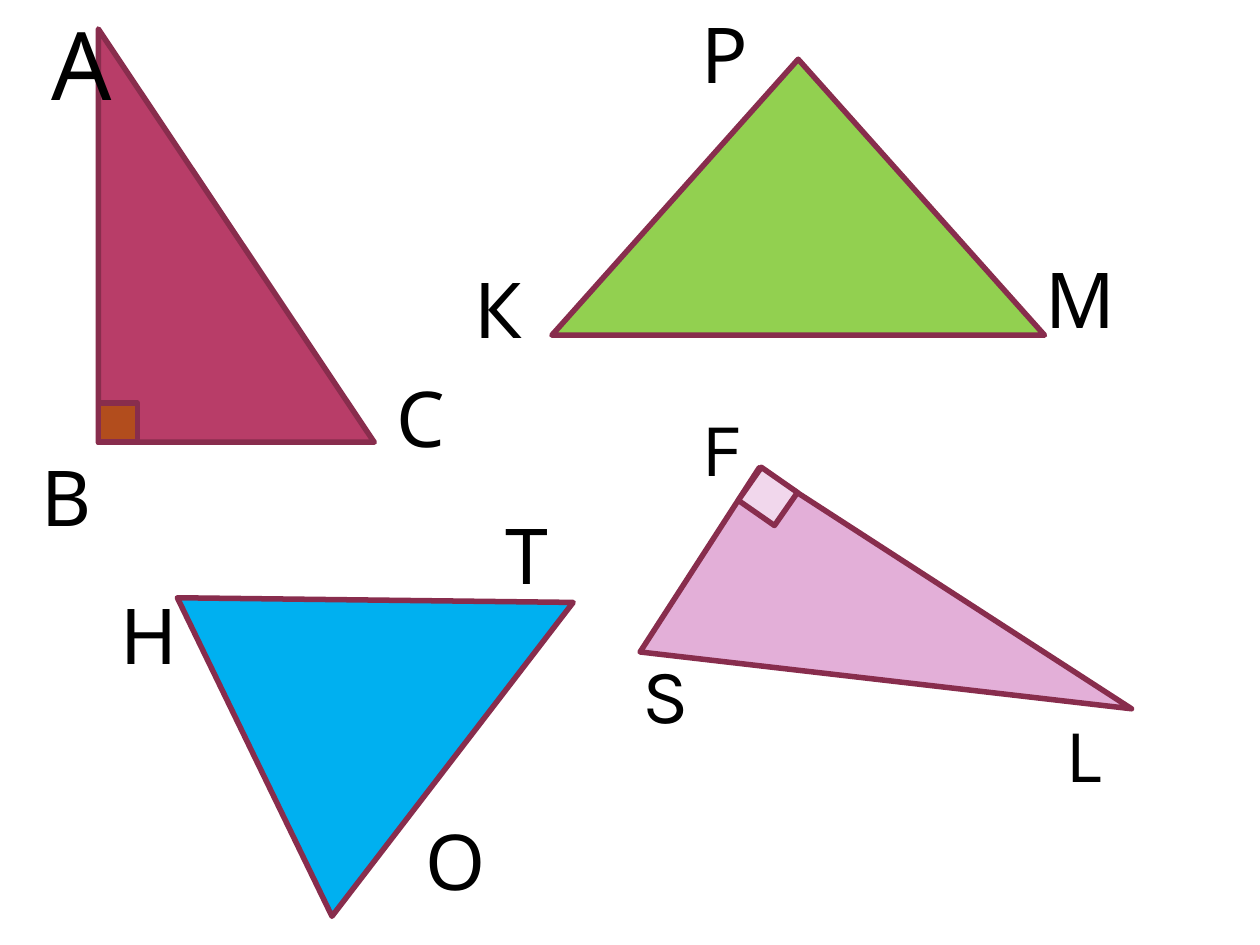
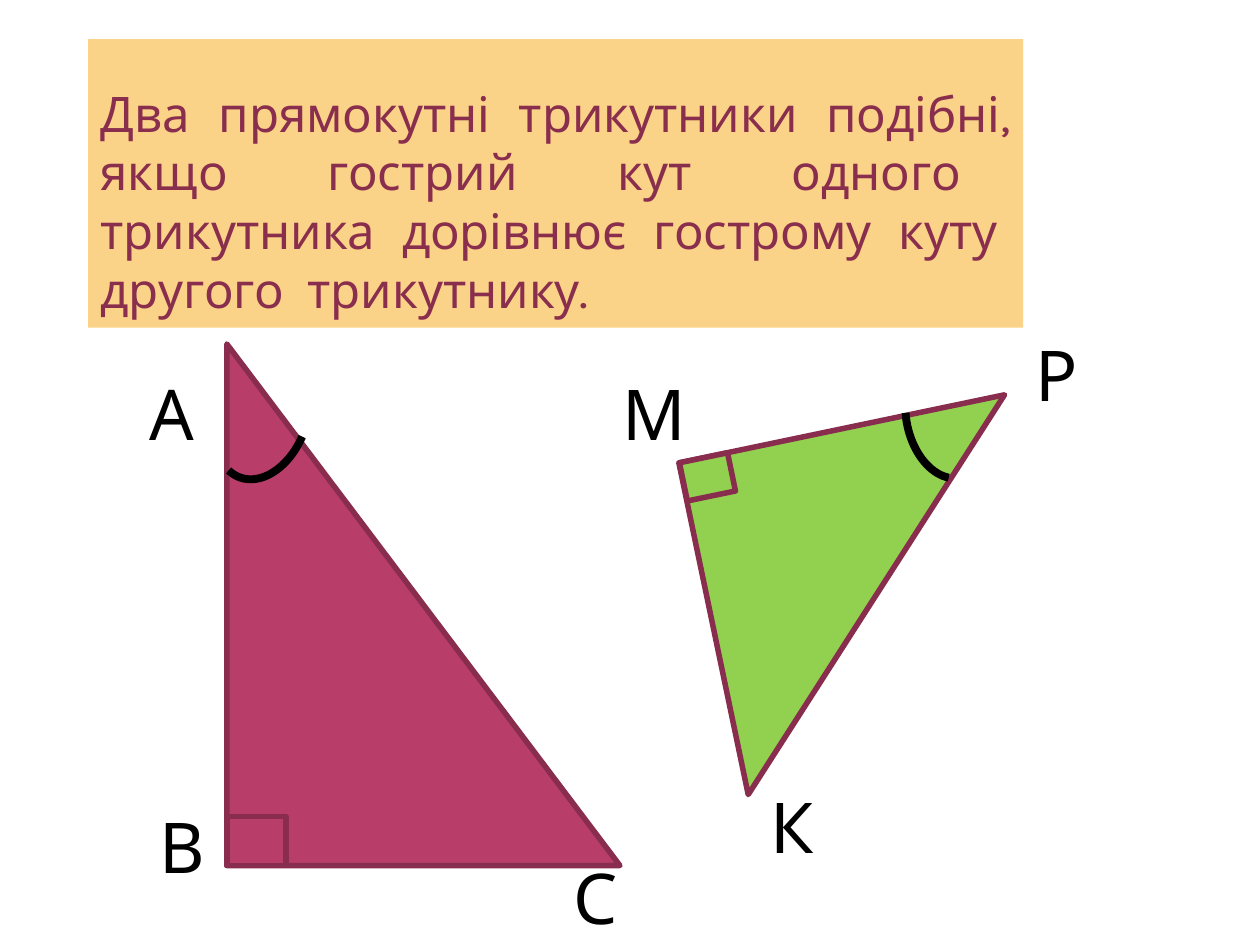
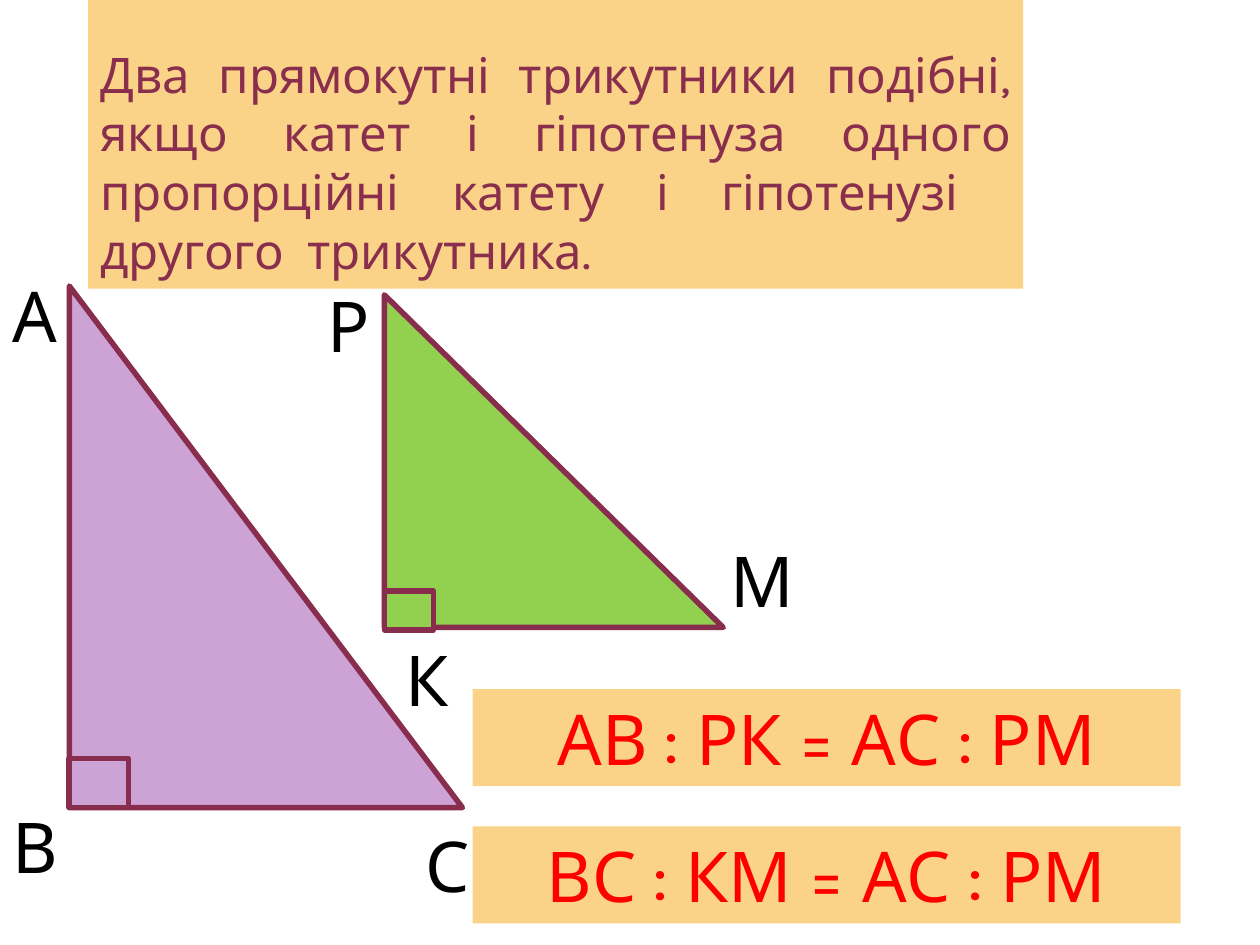
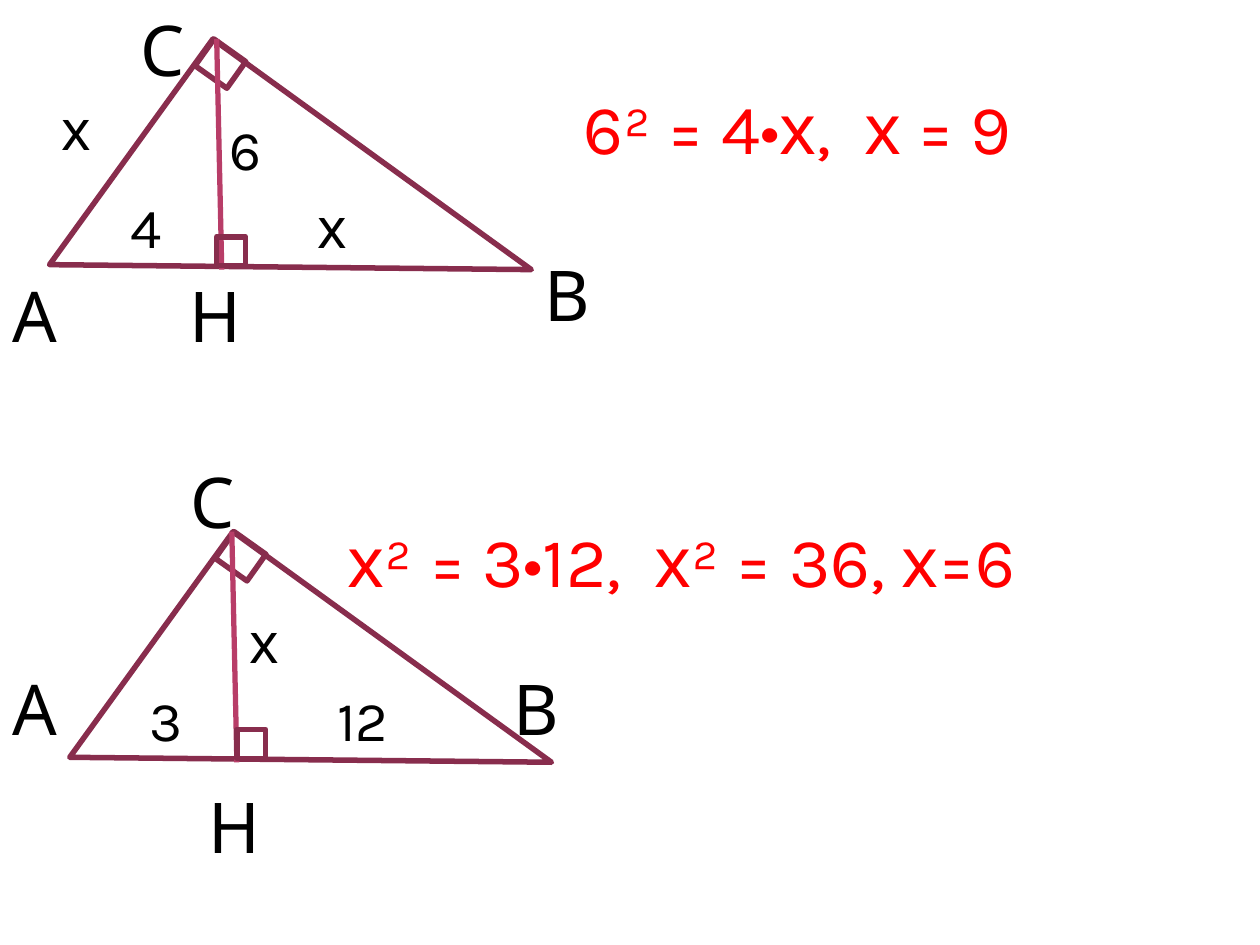
from dataclasses import dataclass

import pptx
import pptx.dml.color
import pptx.enum.shapes
import pptx.enum.text
import pptx.oxml
import pptx.oxml.ns
import pptx.util
from pptx.util import Inches

Kind = pptx.enum.shapes.MSO_SHAPE
Align = pptx.enum.text.PP_ALIGN
Anchor = pptx.enum.text.MSO_ANCHOR
Grow = pptx.enum.text.MSO_AUTO_SIZE


@dataclass(frozen=True)
class Theme:
    font: str = "Karla"
    black: str = "000000"
    red: str = "FF0000"
    wine: str = "8A2E4E"
    edge: str = "882D4D"
    rose: str = "B83D68"
    green: str = "92D050"
    blue: str = "00B0F0"
    pink: str = "E3AFD8"
    pale: str = "F1D7EC"
    lilac: str = "CDA3D6"
    rust: str = "B24D1D"
    sand: str = "FBD388"
    small: int = 28
    side: int = 32
    point: int = 40
    large: int = 44
    huge: int = 54
    outline: float = 3.15
    height: float = 3
    angle: float = 4.5


THEME = Theme()


@dataclass(frozen=True)
class Figure:
    kind: Kind
    left: float
    top: float
    width: float
    height: float
    fill: str = ""
    turn: float = 0


@dataclass(frozen=True)
class Label:
    text: str
    left: float
    top: float
    width: float = 0.7
    size: int = THEME.point
    color: str = THEME.black
    wrap: bool = True


def tint(code: str) -> pptx.dml.color.RGBColor:
    return pptx.dml.color.RGBColor.from_string(code)


def place(slide, item: Figure):
    """Add the bare shape, filled if it has a colour and without a line."""
    shape = slide.shapes.add_shape(
        item.kind, Inches(item.left), Inches(item.top), Inches(item.width), Inches(item.height))
    shape.shadow.inherit = False
    shape.rotation = item.turn
    if item.fill:
        shape.fill.solid()
        shape.fill.fore_color.rgb = tint(item.fill)
    else:
        shape.fill.background()
    shape.line.fill.background()
    return shape


def stroke(line, color: str, width: float) -> None:
    line.color.rgb = tint(color)
    line.width = pptx.util.Pt(width)


def draw(slide, *items: Figure) -> None:
    for item in items:
        stroke(place(slide, item).line, THEME.edge, THEME.outline)


def arc(slide, left: float, top: float, width: float, height: float, turn: float) -> None:
    shape = place(slide, Figure(Kind.ARC, left, top, width, height, turn=turn))
    shape.adjustments[0], shape.adjustments[1] = 167.86, 7.11
    stroke(shape.line, THEME.black, THEME.angle)


def write(shape, text: str, size: int, color: str, align=Align.LEFT, wrap: bool = True) -> None:
    frame = shape.text_frame
    frame.word_wrap = wrap
    frame.auto_size = Grow.SHAPE_TO_FIT_TEXT
    frame.vertical_anchor = Anchor.TOP
    para = frame.paragraphs[0]
    para.text = text
    para.alignment = align
    para.font.name = THEME.font
    para.font.size = pptx.util.Pt(size)
    para.font.color.rgb = tint(color)


def name(slide, *labels: Label) -> None:
    for item in labels:
        box = slide.shapes.add_textbox(
            Inches(item.left), Inches(item.top), Inches(item.width), Inches(0.1 + item.size / 60))
        write(box, item.text, item.size, item.color, wrap=item.wrap)


def banner(slide, top: float, text: str) -> None:
    box = place(slide, Figure(Kind.RECTANGLE, 0.7, top, 7.42, 2.29, THEME.sand))
    box.text_frame.margin_top = Inches(0.35)
    write(box, text, THEME.small, THEME.wine, Align.JUSTIFY)


def ratio(slide, top: float, text: str) -> None:
    box = place(slide, Figure(Kind.RECTANGLE, 3.75, top, 5.62, 0.77, THEME.sand))
    write(box, text, THEME.point, THEME.red, Align.CENTER)


def split(slide, left: float, top: float, foot: float) -> None:
    """Draw a right triangle cut by the height that starts at x = foot."""
    draw(slide,
         Figure(Kind.RECTANGLE, left + 0.42, top - 0.21, 0.26, 0.31, turn=305.4),
         Figure(Kind.RIGHT_TRIANGLE, left, top, 2.21, 3.12, turn=125.9))
    line = slide.shapes.add_connector(
        pptx.enum.shapes.MSO_CONNECTOR.STRAIGHT,
        Inches(foot), Inches(top - 0.25), Inches(foot + 0.04), Inches(top + 1.58))
    stroke(line.line, THEME.rose, THEME.height)
    props = line._element.spPr
    props.append(props.makeelement(pptx.oxml.ns.qn("a:effectLst"), {}))
    draw(slide, Figure(Kind.RECTANGLE, left + 0.52, top + 1.32, 0.23, 0.23))


def shapes(slide) -> None:
    draw(slide,
         Figure(Kind.RIGHT_TRIANGLE, 0.78, 0.23, 2.19, 3.28, THEME.rose),
         Figure(Kind.RIGHT_TRIANGLE, 6.16, 3.64, 1.74, 3.52, THEME.pink, 122.9),
         Figure(Kind.ISOSCELES_TRIANGLE, 4.38, 0.47, 3.91, 2.19, THEME.green),
         Figure(Kind.ISOSCELES_TRIANGLE, 1.88, 3.99, 2.81, 2.81, THEME.blue, 64.1),
         Figure(Kind.RECTANGLE, 0.78, 3.2, 0.31, 0.31, THEME.rust),
         Figure(Kind.RECTANGLE, 5.92, 3.78, 0.35, 0.32, THEME.pale, 34.9))
    name(slide, Label("А", 0.31, 0, 0.65, THEME.huge, wrap=False),
         Label("О", 3.28, 6.41, 0.37, THEME.large))
    spots = [("С", 3.05, 2.89), ("L", 8.36, 5.55), ("Р", 5.47, 0), ("К", 3.67, 2.03),
             ("М", 8.2, 1.95), ("Н", 0.86, 4.61), ("Т", 3.91, 3.98), ("F", 5.47, 3.12),
             ("S", 5, 5.08), ("В", 0.23, 3.52)]
    name(slide, *(Label(*spot, 0.65, THEME.large) for spot in spots))


def acute(slide) -> None:
    banner(slide, 0.31, "Два  прямокутні  трикутники  подібні, якщо  гострий  кут  одного  "
                        "трикутника  дорівнює  гострому  куту  другого  трикутнику.")
    draw(slide,
         Figure(Kind.RIGHT_TRIANGLE, 1.8, 2.73, 3.12, 4.14, THEME.rose),
         Figure(Kind.RIGHT_TRIANGLE, 5.61, 3.4, 2.69, 2.64, THEME.green, 78.2),
         Figure(Kind.RECTANGLE, 1.8, 6.48, 0.47, 0.39, THEME.rose),
         Figure(Kind.RECTANGLE, 5.42, 3.63, 0.39, 0.31, THEME.green, 348.3))
    arc(slide, 1.55, 2.93, 1.06, 0.72, 109.1)
    arc(slide, 7.19, 2.78, 0.68, 1.02, 170.3)
    name(slide, Label("А", 1.09, 2.89), Label("В", 1.17, 6.33), Label("С", 4.45, 6.73),
         Label("Р", 8.12, 2.58, 0.86), Label("К", 6.02, 6.17), Label("М", 4.84, 2.89))


def sides(slide) -> None:
    banner(slide, 0, "Два  прямокутні  трикутники  подібні, якщо катет і гіпотенуза одного "
                     "пропорційні катету і гіпотенузі  другого  трикутника.")
    draw(slide,
         Figure(Kind.RIGHT_TRIANGLE, 0.55, 2.27, 3.12, 4.14, THEME.lilac),
         Figure(Kind.RIGHT_TRIANGLE, 3.05, 2.34, 2.69, 2.64, THEME.green),
         Figure(Kind.RECTANGLE, 0.55, 6.02, 0.47, 0.39, THEME.lilac),
         Figure(Kind.RECTANGLE, 3.05, 4.69, 0.39, 0.31, THEME.green))
    name(slide, Label("А", 0, 2.11), Label("В", 0, 6.33), Label("С", 3.28, 6.48, 0.47),
         Label("Р", 2.5, 2.19, 0.62), Label("К", 3.12, 5), Label("М", 5.7, 4.22))
    ratio(slide, 5.47, "АВ : РК = АС : РМ")
    ratio(slide, 6.56, "ВС : КМ = АС : РМ")


def heights(slide) -> None:
    split(slide, 1.2, 0.56, 1.72)
    split(slide, 1.36, 4.47, 1.84)
    name(slide,
         Label("А", 0, 2.11), Label("С", 1.02, 0, 0.39),
         Label("В", 4.22, 1.95), Label("Н", 1.41, 2.11),
         Label("А", 0, 5.23), Label("С", 1.41, 3.59, 0.39),
         Label("В", 3.98, 5.23), Label("Н", 1.56, 6.17),
         Label("12", 2.58, 5.39, 0.86, THEME.side),
         Label("6² = 4•х,  х = 9", 4.53, 0.62, 4.3, color=THEME.red),
         Label("х² = 3•12,  х² = 36, х=6", 2.66, 4.06, 6.56, color=THEME.red))
    spots = [("х", 0.39, 0.7), ("х", 2.42, 1.48), ("4", 0.94, 1.48),
             ("6", 1.72, 0.86), ("3", 1.09, 5.39), ("х", 1.88, 4.77)]
    name(slide, *(Label(*spot, 0.47, THEME.side) for spot in spots))


def main() -> None:
    deck = pptx.Presentation()
    deck.slide_width, deck.slide_height = Inches(10), Inches(7.5)
    for build in (shapes, acute, sides, heights):
        build(deck.slides.add_slide(deck.slide_layouts[6]))
    deck.save("out.pptx")


if __name__ == "__main__":
    main()
